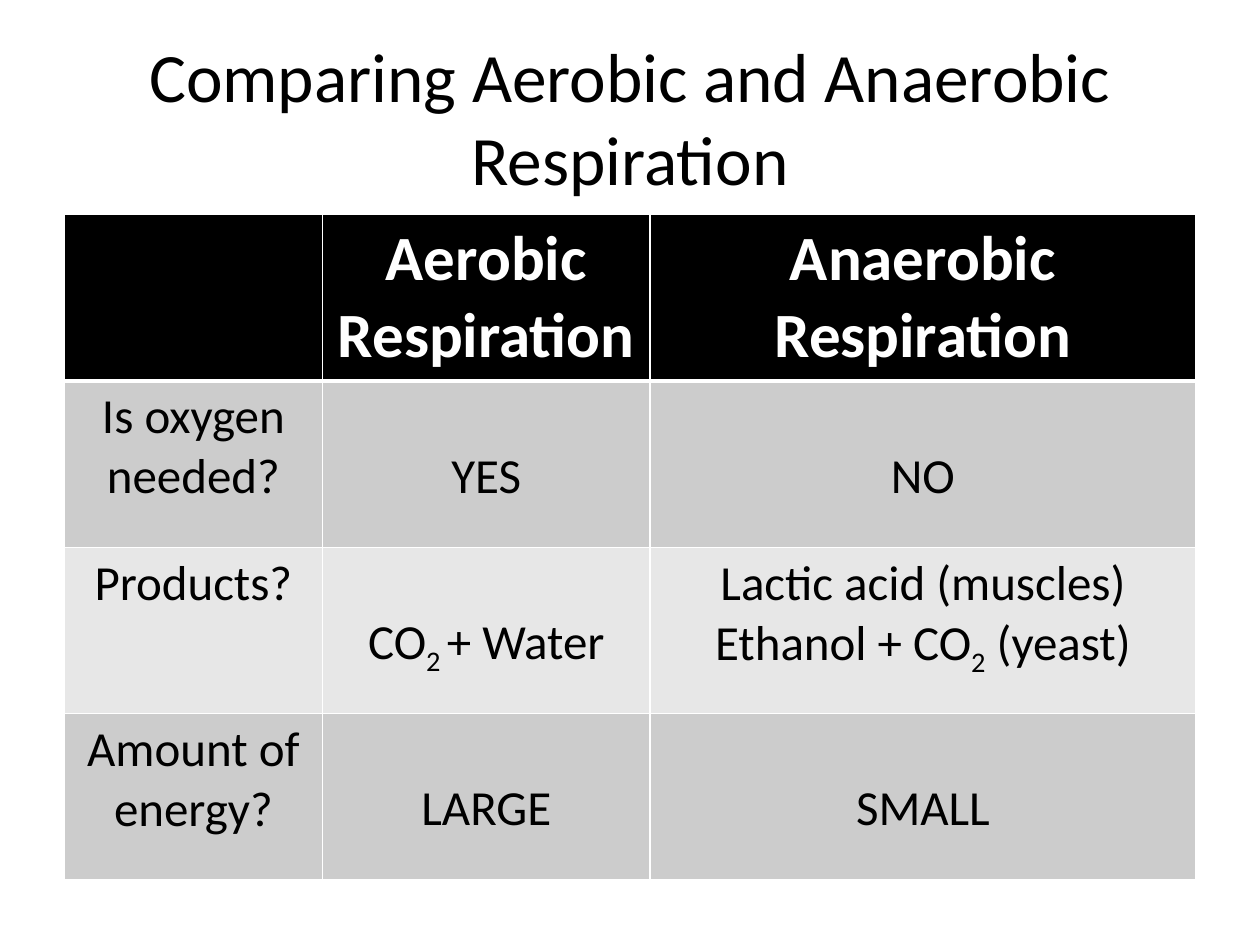
import pptx
import pptx.dml.color
import pptx.enum.text
import pptx.oxml
import pptx.oxml.ns
import pptx.util

Inches = pptx.util.Inches
Pt = pptx.util.Pt
RGBColor = pptx.dml.color.RGBColor

BLACK = RGBColor(0x00, 0x00, 0x00)
WHITE = RGBColor(0xFF, 0xFF, 0xFF)
DARK_BAND = RGBColor(0xCC, 0xCC, 0xCC)
LIGHT_BAND = RGBColor(0xE7, 0xE7, 0xE7)

COLUMN_WIDTHS = [2.05, 2.6, 4.33]
ROW_HEIGHT = 1.32
ANSWER_TOP = 0.52  # leaves one line free above a one-line answer

# A cell is a list of paragraphs, a paragraph a list of runs;
# a run that starts with "_" is a subscript.
ROWS = [
    [[], [["Aerobic Respiration"]], [["Anaerobic Respiration"]]],
    [[["Is oxygen needed?"]], [["YES"]], [["NO"]]],
    [[["Products?"]], [["CO", "_2 ", "+ Water"]],
     [["Lactic acid (muscles)"], ["Ethanol + CO", "_2", " (yeast)"]]],
    [[["Amount of energy?"]], [["LARGE"]], [["SMALL"]]],
]


class SlideBuilder:
    font = "Calibri"
    title_size = 39.6
    header_size = 36
    body_size = 28

    def __init__(self, slide):
        self.slide = slide

    def add_run(self, p, text, size, color, bold=False):
        p.alignment = pptx.enum.text.PP_ALIGN.CENTER
        r = p.add_run()
        r.text = text.removeprefix("_")
        r.font.name = self.font
        r.font.size = Pt(size)
        r.font.bold = bold
        r.font.color.rgb = color
        if text.startswith("_"):
            r.font._element.set("baseline", "-25000")

    def title(self, text, left, top, width, height):
        sp = self.slide.shapes.title
        sp.left, sp.top = Inches(left), Inches(top)
        sp.width, sp.height = Inches(width), Inches(height)
        tf = sp.text_frame
        tf.word_wrap = True
        tf.auto_size = pptx.enum.text.MSO_AUTO_SIZE.NONE
        tf.vertical_anchor = pptx.enum.text.MSO_ANCHOR.MIDDLE
        self.add_run(tf.paragraphs[0], text, self.title_size, BLACK)

    def borders(self, cell, top, bottom):
        """Draw white cell borders; top and bottom are widths in points."""
        tc_pr = cell._tc.get_or_add_tcPr()
        for side, width in (("L", 1), ("R", 1), ("T", top), ("B", bottom)):
            tc_pr.append(pptx.oxml.parse_xml(
                f'<a:ln{side} {pptx.oxml.ns.nsdecls("a")} w="{Pt(width)}">'
                f'<a:solidFill><a:srgbClr val="{WHITE}"/></a:solidFill>'
                f'</a:ln{side}>'))

    def cell(self, cell, paragraphs, row, col):
        header = row == 0
        self.borders(cell, 3 if row == 1 else 1, 3 if header else 1)
        cell.fill.solid()
        cell.fill.fore_color.rgb = (
            BLACK if header else DARK_BAND if row % 2 else LIGHT_BAND)
        if not header and col > 0 and len(paragraphs) == 1:
            cell.margin_top = Inches(ANSWER_TOP)
        size = self.header_size if header else self.body_size
        tf = cell.text_frame
        for i, runs in enumerate(paragraphs):
            p = tf.add_paragraph() if i else tf.paragraphs[0]
            for text in runs:
                self.add_run(p, text, size, WHITE if header else BLACK, header)

    def table(self, rows, left, top):
        table = self.slide.shapes.add_table(
            len(rows), len(COLUMN_WIDTHS), Inches(left), Inches(top),
            Inches(sum(COLUMN_WIDTHS)), Inches(ROW_HEIGHT * len(rows))).table
        for column, width in zip(table.columns, COLUMN_WIDTHS):
            column.width = Inches(width)
        for i, cells in enumerate(rows):
            table.rows[i].height = Inches(ROW_HEIGHT)
            for j, paragraphs in enumerate(cells):
                self.cell(table.cell(i, j), paragraphs, i, j)


def main():
    prs = pptx.Presentation()
    prs.slide_width, prs.slide_height = Inches(10), Inches(7.5)
    builder = SlideBuilder(prs.slides.add_slide(prs.slide_layouts[5]))
    builder.title("Comparing Aerobic and Anaerobic Respiration",
                  0.5, 0.3, 9, 1.25)
    builder.table(ROWS, 0.51, 1.7)
    prs.save("out.pptx")


if __name__ == "__main__":
    main()
